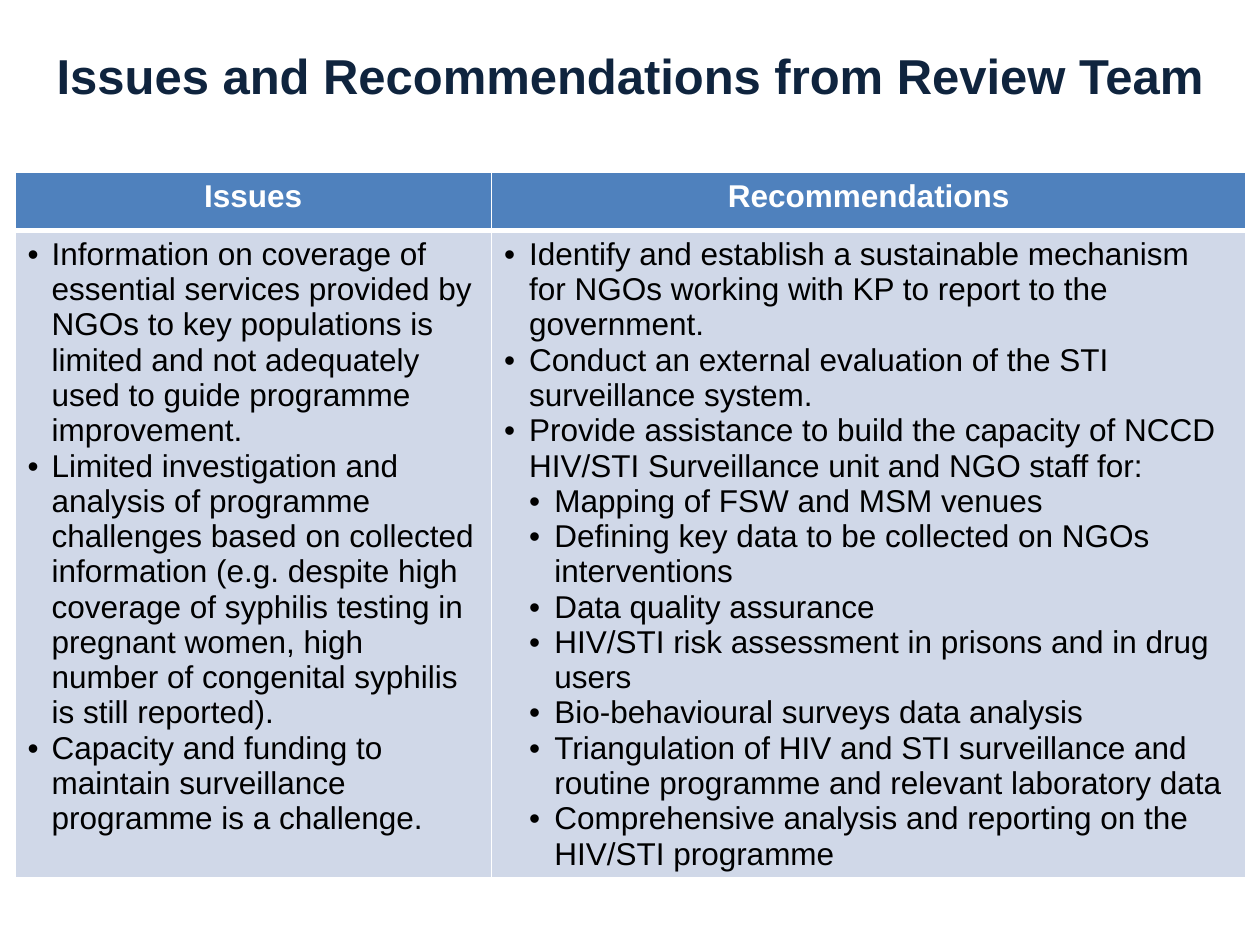
import pptx
import pptx.util
import pptx.dml.color
import pptx.enum.text
import pptx.oxml
import pptx.oxml.ns
from pptx.util import Inches

FONT = "Arial"
WHITE, NAVY, BLUE, PALE, BLACK = "FFFFFF", "0F243E", "4F81BD", "D0D8E8", "000000"

HEADERS = ["Issues", "Recommendations"]
# Each entry is (level, text).
ISSUES = [
    (0, "Information on coverage of essential services provided by NGOs to key "
        "populations is limited and not adequately used to guide programme improvement."),
    (0, "Limited investigation and analysis of programme challenges based on collected "
        "information (e.g. despite high coverage of syphilis testing in pregnant women, "
        "high number of congenital syphilis is still reported)."),
    (0, "Capacity and funding to maintain surveillance programme is a challenge."),
]
RECOMMENDATIONS = [
    (0, "Identify and establish a sustainable mechanism for NGOs working with KP to "
        "report to the government."),
    (0, "Conduct an external evaluation of the STI surveillance system."),
    (0, "Provide assistance to build the capacity of NCCD HIV/STI Surveillance unit "
        "and NGO staff for:"),
    (1, "Mapping of FSW and MSM venues"),
    (1, "Defining key data to be collected on NGOs interventions"),
    (1, "Data quality assurance"),
    (1, "HIV/STI risk assessment in prisons and in drug users"),
    (1, "Bio-behavioural surveys data analysis"),
    (1, "Triangulation of HIV and STI surveillance and routine programme and relevant "
        "laboratory data"),
    (1, "Comprehensive analysis and reporting on the HIV/STI programme"),
]


def rgb(value):
    return pptx.dml.color.RGBColor.from_string(value)


def set_fill(obj, color):
    obj.fill.solid()
    obj.fill.fore_color.rgb = rgb(color)


def style_paragraph(p, size, color, bold=False, centered=False):
    align = pptx.enum.text.PP_ALIGN
    p.alignment = align.CENTER if centered else align.LEFT
    for r in p.runs:
        r.font.name = FONT
        r.font.size = pptx.util.Pt(size)
        r.font.bold = bold
        r.font.color.rgb = rgb(color)


def add_bullet(p, level, indent):
    p.level = level
    pPr = p._p.get_or_add_pPr()
    pPr.set("marL", str(indent * (level + 1)))
    pPr.set("indent", str(-indent))
    ns = pptx.oxml.ns.nsdecls("a")
    pPr.append(pptx.oxml.parse_xml(f'<a:buFont {ns} typeface="{FONT}"/>'))
    pPr.append(pptx.oxml.parse_xml(f'<a:buChar {ns} char="•"/>'))


def set_borders(cell, **widths):
    """Draw white borders; widths are points keyed by side L, R, T, B."""
    tcPr = cell._tc.get_or_add_tcPr()
    for i, (side, width) in enumerate(widths.items()):
        tcPr.insert(i, pptx.oxml.parse_xml(
            f'<a:ln{side} {pptx.oxml.ns.nsdecls("a")} w="{pptx.util.Pt(width)}">'
            f'<a:solidFill><a:srgbClr val="{WHITE}"/></a:solidFill></a:ln{side}>'))


def add_title(slide, left, top, width, height):
    s = slide.shapes.add_textbox(left, top, width, height)
    set_fill(s, WHITE)
    tf = s.text_frame
    tf.word_wrap = True
    tf.vertical_anchor = pptx.enum.text.MSO_ANCHOR.MIDDLE
    tf.text = "Issues and Recommendations from Review Team"
    style_paragraph(tf.paragraphs[0], 28, NAVY, bold=True, centered=True)


def fill_header(cell, text):
    set_fill(cell, BLUE)
    set_borders(cell, L=1, R=1, T=1, B=3)
    cell.text_frame.text = text
    style_paragraph(cell.text_frame.paragraphs[0], 18, WHITE, bold=True, centered=True)


def fill_list(cell, items, indent):
    set_fill(cell, PALE)
    set_borders(cell, L=1, R=1, T=3, B=1)
    tf = cell.text_frame
    tf.text = "\n".join(text for _, text in items)
    for p, (level, _) in zip(tf.paragraphs, items):
        style_paragraph(p, 18, BLACK)
        add_bullet(p, level, indent)


def add_review_table(slide, left, top, width, height):
    table = slide.shapes.add_table(2, 2, left, top, width, height).table
    issues_width, header_height = Inches(3.78), Inches(0.46)
    table.columns[0].width = issues_width
    table.columns[1].width = width - issues_width
    table.rows[0].height = header_height
    table.rows[1].height = height - header_height
    for col, text in enumerate(HEADERS):
        fill_header(table.cell(0, col), text)
    fill_list(table.cell(1, 0), ISSUES, Inches(0.19))
    fill_list(table.cell(1, 1), RECOMMENDATIONS, Inches(0.2))


def main():
    prs = pptx.Presentation()
    prs.slide_width, prs.slide_height = Inches(10), Inches(7.5)
    slide = prs.slides.add_slide(prs.slide_layouts[6])
    add_review_table(slide, Inches(0.12), Inches(1.37), Inches(9.77), Inches(5.59))
    add_title(slide, 0, Inches(-0.03), prs.slide_width, Inches(1.25))
    prs.save("out.pptx")


if __name__ == "__main__":
    main()
